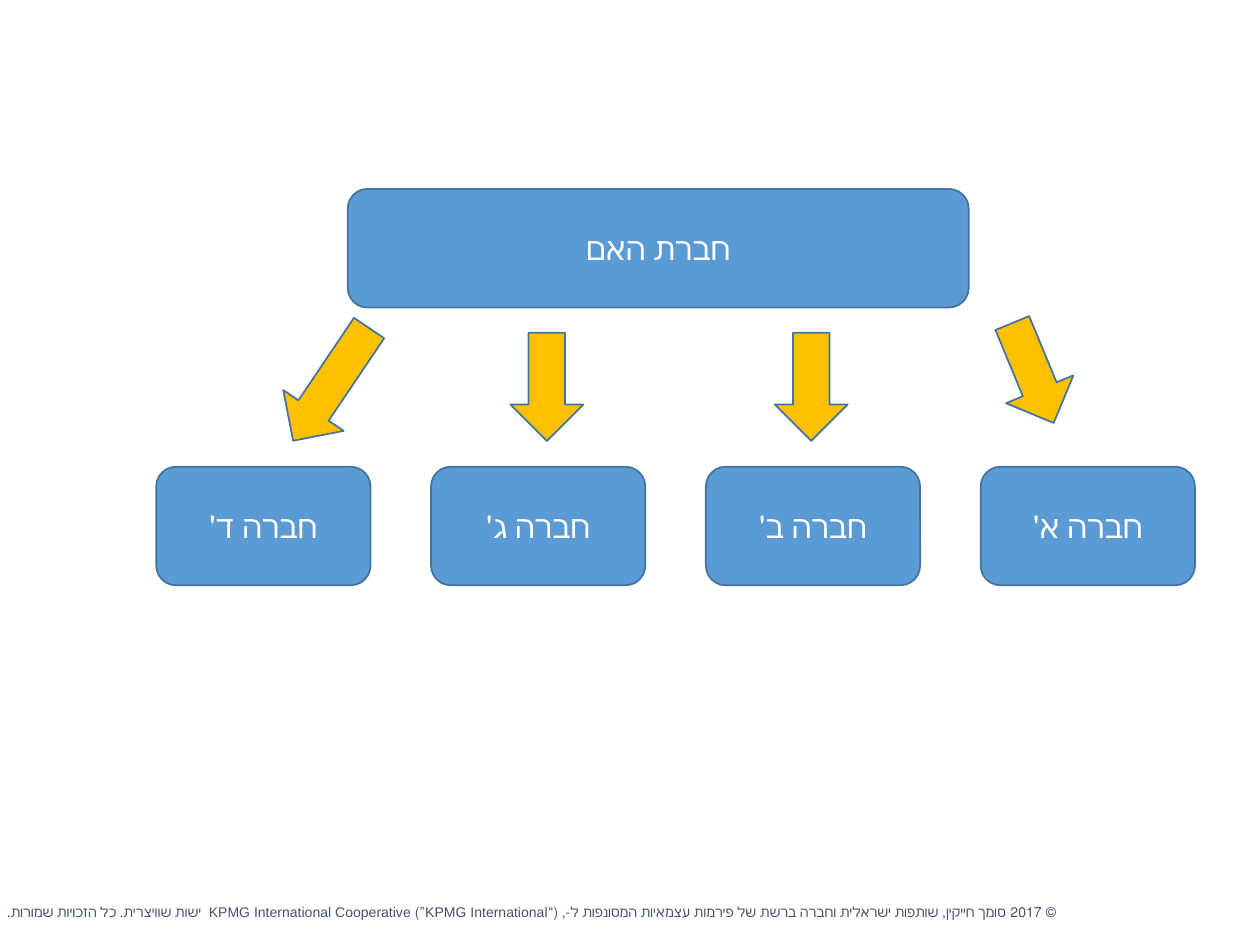
"""Build a slide showing a parent company and its four subsidiaries."""
from pptx import Presentation
from pptx.dml.color import RGBColor
from pptx.enum.shapes import MSO_SHAPE
from pptx.enum.text import MSO_ANCHOR, PP_ALIGN
from pptx.util import Cm, Pt

ROUNDED = MSO_SHAPE.ROUNDED_RECTANGLE
DOWN_ARROW = MSO_SHAPE.DOWN_ARROW
MIDDLE = MSO_ANCHOR.MIDDLE
CENTER, RIGHT = PP_ALIGN.CENTER, PP_ALIGN.RIGHT

BLUE, GOLD, OUTLINE, WHITE, SLATE = "5B9BD5", "FFC000", "43739E", "FFFFFF", "44546A"

PARENT = "חברת האם"
SUBSIDIARIES = ["חברה ד'", "חברה ג'", "חברה ב'", "חברה א'"]
COPYRIGHT = (
    " © 2017 סומך חייקין, שותפות ישראלית וחברה ברשת של פירמות עצמאיות המסונפות ל-, "
    "(“KPMG International”) KPMG International Cooperative  ישות שוויצרית. כל הזכויות שמורות."
)
ARROWS = [
    (5.94, 6.38, 2.74, 34),
    (10.29, 6.71, 2.18, 0),
    (15.62, 6.71, 2.18, 0),
    (20.09, 6.43, 2.18, 337.5),
]
ARROW_WIDTH = 1.47
COMPANY_HEIGHT = 2.39
SUBSIDIARY_LEFT, SUBSIDIARY_TOP = 3.15, 9.41
SUBSIDIARY_WIDTH, SUBSIDIARY_STEP = 4.32, 5.54


def color(value):
    return RGBColor.from_string(value)


def write(shape, text, size, font, ink, align):
    frame = shape.text_frame
    frame.word_wrap = True
    frame.vertical_anchor = MIDDLE
    paragraph = frame.paragraphs[0]
    paragraph.alignment = align
    paragraph._p.get_or_add_pPr().set("rtl", "1")
    run = paragraph.add_run()
    run.text = text
    run.font.size = Pt(size)
    run.font.name = font
    run.font.color.rgb = color(ink)


def add_block(slide, kind, left, top, width, height, fill):
    block = slide.shapes.add_shape(kind, Cm(left), Cm(top), Cm(width), Cm(height))
    block.shadow.inherit = False
    block.fill.solid()
    block.fill.fore_color.rgb = color(fill)
    block.line.color.rgb = color(OUTLINE)
    block.line.width = Pt(1)
    return block


def add_company(slide, name, left, top, width):
    company = add_block(slide, ROUNDED, left, top, width, COMPANY_HEIGHT, BLUE)
    write(company, name, size=18, font="Calibri", ink=WHITE, align=CENTER)


def main():
    deck = Presentation()
    deck.slide_width, deck.slide_height = Cm(25.4), Cm(19.05)
    slide = deck.slides.add_slide(deck.slide_layouts[6])

    footer = slide.shapes.add_textbox(Cm(-2.92), Cm(18.08), Cm(24.54), Cm(0.61))
    write(footer, COPYRIGHT, size=8, font="Arial", ink=SLATE, align=RIGHT)

    add_company(slide, PARENT, 7.01, 3.81, 12.52)
    for left, top, height, angle in ARROWS:
        arrow = add_block(slide, DOWN_ARROW, left, top, ARROW_WIDTH, height, GOLD)
        arrow.rotation = angle
    for column, name in enumerate(SUBSIDIARIES):
        left = SUBSIDIARY_LEFT + column * SUBSIDIARY_STEP
        add_company(slide, name, left, SUBSIDIARY_TOP, SUBSIDIARY_WIDTH)

    deck.save("out.pptx")


if __name__ == "__main__":
    main()
